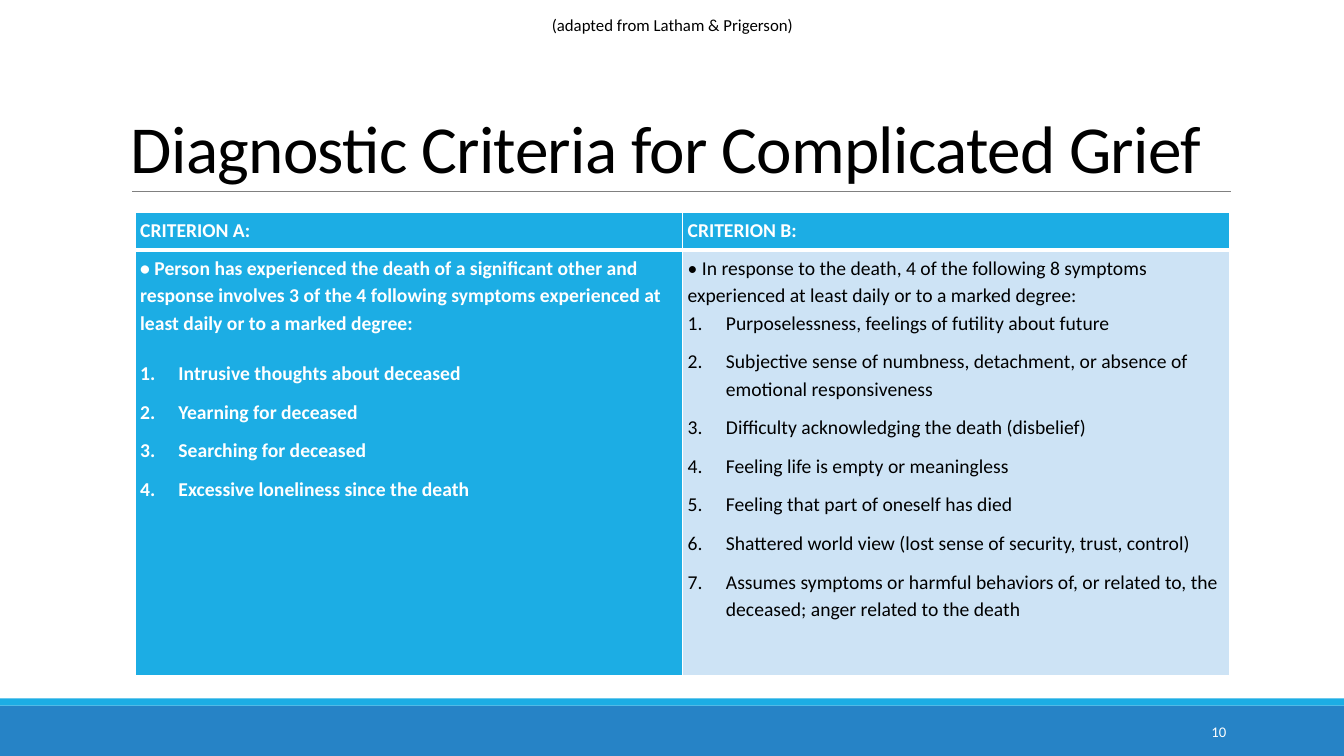
from dataclasses import dataclass

from lxml.etree import SubElement
from pptx import Presentation
from pptx.dml.color import RGBColor
from pptx.enum.shapes import MSO_CONNECTOR, MSO_SHAPE
from pptx.enum.text import MSO_ANCHOR, PP_ALIGN
from pptx.oxml.ns import qn
from pptx.util import Inches, Pt


@dataclass(frozen=True)
class Theme:
    """Colours, font and type sizes of the deck."""
    font: str = "Calibri"
    ink: str = "000000"
    white: str = "FFFFFF"
    accent: str = "1CADE4"
    footer: str = "2683C6"
    pale: str = "CDE3F5"
    rule: str = "808080"
    title_size: float = 48
    body_size: float = 14
    caption_size: float = 12
    number_size: float = 10.5


THEME = Theme()
WIDTH, HEIGHT = 13.33, 7.5

CRITERIA = [
    {
        "heading": "CRITERION A:",
        "intro": "•\u00a0Person has experienced the death of a significant other and response "
                 "involves 3 of the 4 following symptoms experienced at least daily or to a "
                 "marked degree:",
        "symptoms": [
            "Intrusive thoughts about deceased",
            "Yearning for deceased",
            "Searching for deceased",
            "Excessive loneliness since the death",
        ],
        "fill": THEME.accent, "color": THEME.white, "bold": True, "intro_gap": 16.6,
    },
    {
        "heading": "CRITERION B:",
        "intro": "•\u00a0In response to the death, 4 of the following 8 symptoms experienced "
                 "at least daily or to a marked degree:",
        "symptoms": [
            "Purposelessness, feelings of futility about future",
            "Subjective sense of numbness, detachment, or absence of emotional responsiveness",
            "Difficulty acknowledging the death (disbelief)",
            "Feeling life is empty or meaningless",
            "Feeling that part of oneself has died",
            "Shattered world view (lost sense of security, trust, control)",
            "Assumes symptoms or harmful behaviors of, or related to, the deceased; "
            "anger related to the death",
        ],
        "fill": THEME.pale, "color": THEME.ink, "bold": False, "intro_gap": 0,
    },
]


def style_font(para, size, color, bold=False):
    """Set the font of a whole paragraph."""
    para.font.name = THEME.font
    para.font.size = Pt(size)
    para.font.bold = bold
    para.font.color.rgb = RGBColor.from_string(color)


def add_text(page, box, text, size, color, align, anchor, wrap=True):
    """Place one line of text in a box and return its paragraph."""
    frame = page.shapes.add_textbox(*map(Inches, box)).text_frame
    frame.word_wrap = wrap
    frame.vertical_anchor = anchor
    para = frame.paragraphs[0]
    para.text = text
    para.alignment = align
    style_font(para, size, color)
    return para


def add_band(page, box, color):
    """Draw a plain filled rectangle."""
    band = page.shapes.add_shape(MSO_SHAPE.RECTANGLE, *map(Inches, box))
    band.shadow.inherit = False
    band.fill.solid()
    band.fill.fore_color.rgb = RGBColor.from_string(color)
    band.line.fill.background()


def add_footer(page, box, number):
    """Draw the two footer bands and the slide number."""
    left, top, width, height = box
    stripe = 0.07
    add_band(page, (left, top + stripe, width, height - stripe), THEME.footer)
    add_band(page, (left, top, width, stripe), THEME.accent)
    add_text(page, (left + 10.83, top + 0.13, 1.43, 0.4), number, THEME.number_size,
             THEME.white, PP_ALIGN.RIGHT, MSO_ANCHOR.MIDDLE)


def add_title(page, box, text):
    """Place the title with the thin rule along its lower edge."""
    left, top, width, height = box
    para = add_text(page, box, text, THEME.title_size, THEME.ink,
                    PP_ALIGN.LEFT, MSO_ANCHOR.BOTTOM)
    para.runs[0].font._element.set("spc", "-50")
    start, end, level = left + 0.11, left + width + 0.01, top + height
    rule = page.shapes.add_connector(MSO_CONNECTOR.STRAIGHT, Inches(start), Inches(level),
                                     Inches(end), Inches(level))
    rule.line.color.rgb = RGBColor.from_string(THEME.rule)
    rule.line.width = Pt(0.5)
    SubElement(rule._element.spPr, qn("a:effectLst"))


def style_cell(cell, color, top, bottom):
    """Set the fill, margins and white borders of a cell."""
    cell.margin_left = cell.margin_right = Inches(0.05)
    cell.margin_top = cell.margin_bottom = Inches(0.03)
    properties = cell._tc.get_or_add_tcPr()
    for side, points in (("L", 1), ("R", 1), ("T", top), ("B", bottom)):
        border = SubElement(properties, qn(f"a:ln{side}"), w=str(Pt(points)))
        SubElement(SubElement(border, qn("a:solidFill")), qn("a:srgbClr"), val=THEME.white)
    cell.fill.solid()
    cell.fill.fore_color.rgb = RGBColor.from_string(color)


def style_para(para, color, bold, after):
    """Set the font and spacing of a table paragraph."""
    style_font(para, THEME.body_size, color, bold)
    para.line_spacing = Pt(19.6)
    para.space_before = Pt(0)
    para.space_after = Pt(after)


def number_para(para):
    """Give a paragraph a hanging automatic number."""
    properties = para._p.get_or_add_pPr()
    indent = Inches(0.38)
    properties.set("marL", str(indent))
    properties.set("indent", str(-indent))
    bullet = SubElement(properties, qn("a:buAutoNum"), type="arabicPeriod")
    properties.find(qn("a:defRPr")).addprevious(bullet)


def add_criteria(page, box, criteria):
    """Build the table with one column for each criterion."""
    left, top, width, height = box
    table = page.shapes.add_table(2, len(criteria), *map(Inches, box)).table
    header = 0.37
    table.rows[0].height = Inches(header)
    table.rows[1].height = Inches(height - header)
    for column, criterion in enumerate(criteria):
        table.columns[column].width = Inches(width / len(criteria))
        heading, body = table.cell(0, column), table.cell(1, column)
        style_cell(heading, THEME.accent, 1, 3)
        heading.text = criterion["heading"]
        style_para(heading.text_frame.paragraphs[0], THEME.white, True, 0)
        style_cell(body, criterion["fill"], 3, 1)
        color, bold = criterion["color"], criterion["bold"]
        intro = body.text_frame.paragraphs[0]
        intro.text = criterion["intro"]
        style_para(intro, color, bold, criterion["intro_gap"])
        for symptom in criterion["symptoms"]:
            para = body.text_frame.add_paragraph()
            para.text = symptom
            style_para(para, color, bold, 8)
            number_para(para)


def main():
    """Build and save the deck."""
    deck = Presentation()
    deck.slide_width, deck.slide_height = Inches(WIDTH), Inches(HEIGHT)
    page = deck.slides.add_slide(deck.slide_layouts[6])
    add_footer(page, (0, 6.93, WIDTH, HEIGHT - 6.93), "10")
    add_title(page, (1.2, 0.31, 11, 1.59), "Diagnostic Criteria for Complicated Grief")
    add_criteria(page, (1.34, 2.11, 10.86, 4.59), CRITERIA)
    add_text(page, (5.36, 0.1, 2.62, 0.3), "(adapted from Latham & Prigerson)",
             THEME.caption_size, THEME.ink, PP_ALIGN.CENTER, MSO_ANCHOR.MIDDLE, wrap=False)
    deck.save("out.pptx")


if __name__ == "__main__":
    main()
